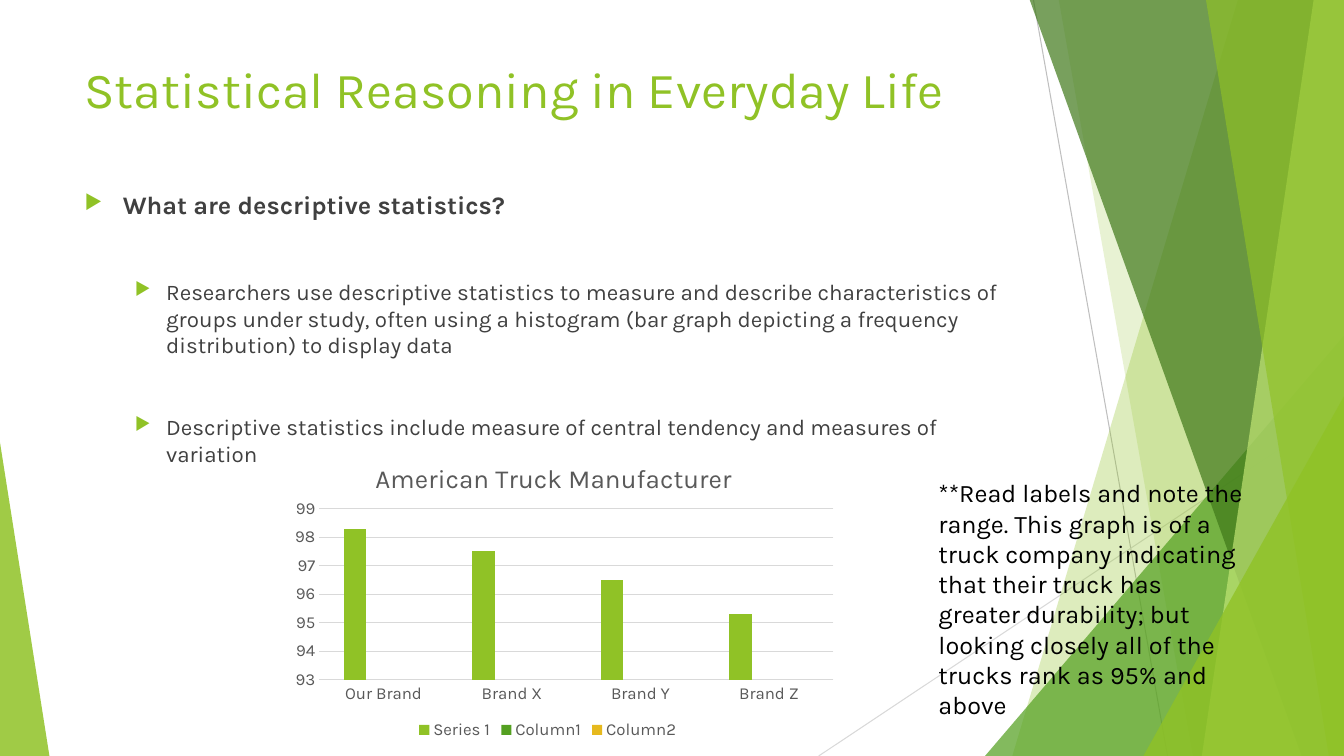
import pptx
import pptx.chart.data
import pptx.dml.color
import pptx.enum.chart
import pptx.enum.shapes
import pptx.enum.text
import pptx.oxml
import pptx.oxml.ns
import pptx.util
import lxml.etree

Inches = pptx.util.Inches
Pt = pptx.util.Pt
RGB = pptx.dml.color.RGBColor
qn = pptx.oxml.ns.qn

LIME = RGB(0x90, 0xC2, 0x26)
GREEN = RGB(0x54, 0xA0, 0x21)
PINE = RGB(0x3F, 0x78, 0x19)
PALE = RGB(0xC0, 0xE4, 0x74)
GOLD = RGB(0xE6, 0xB9, 0x1E)
BLACK = RGB(0, 0, 0)
DARK = RGB(0x40, 0x40, 0x40)
GREY = RGB(0x59, 0x59, 0x59)
SILVER = RGB(0xBF, 0xBF, 0xBF)
MIST = RGB(0xD9, 0xD9, 0xD9)


def apply(item, form):
    for name, value in form.items():
        setattr(item, name, value)


def style(font, size, color, bold=False):
    apply(font, {"name": "Karla", "size": Pt(size), "bold": bold})
    font.color.rgb = color


def tint(shape, color, alpha):
    shape.shadow.inherit = False
    shape.fill.solid()
    shape.fill.fore_color.rgb = color
    shape.line.fill.background()
    node = shape._element.spPr.find(qn("a:solidFill"))[0]
    lxml.etree.SubElement(node, qn("a:alpha"), val=str(alpha * 1000))


def add_line(slide, start, end, color):
    kind = pptx.enum.shapes.MSO_CONNECTOR.STRAIGHT
    line = slide.shapes.add_connector(kind, *map(Inches, start + end))
    line.line.color.rgb = color
    line.line.width = Pt(0.75)
    lxml.etree.SubElement(line._element.spPr, qn("a:effectLst"))


def add_facet(slide, box, head, foot, color, alpha):
    left, top, width, height = box
    right, base = left + width, top + height
    points = [(right, top - 0.01), (right, base), (left + foot, base)]
    pen = slide.shapes.build_freeform(Inches(left + head), Inches(top - 0.01))
    pen.add_line_segments([(Inches(x), Inches(y)) for x, y in points])
    tint(pen.convert_to_shape(), color, alpha)


def add_wedge(slide, box, left, wide, tall, tip, color, alpha):
    x, y, width, height = box
    kind = pptx.enum.shapes.MSO_SHAPE.ISOSCELES_TRIANGLE
    spot = (x + left, y + height - tall, wide, tall)
    wedge = slide.shapes.add_shape(kind, *map(Inches, spot))
    wedge.adjustments[0] = tip
    tint(wedge, color, alpha)


def add_decor(slide, box):
    left, top, width, height = box
    right, base = left + width, top + height
    add_line(slide, (left + 10.25, top), (left + 11.58, base), SILVER)
    add_line(slide, (right, top + 4.03), (left + 8.12, base), MIST)
    for part, *form in [
        (add_facet, 12.28, 10.04, LIME, 30),
        (add_facet, 10.5, 11.83, LIME, 20),
        (add_wedge, 9.77, 3.56, 4.17, 1, GREEN, 72),
        (add_facet, 10.21, 12.91, PINE, 70),
        (add_facet, 13.03, 11.92, PALE, 70),
        (add_facet, 11.96, 13.18, LIME, 65),
        (add_wedge, 11.34, 1.99, 3.57, 1, LIME, 80),
        (add_wedge, 0, 0.49, 3.11, 0, LIME, 85),
    ]:
        part(slide, box, *form)


def add_frame(slide, box):
    frame = slide.shapes.add_textbox(*map(Inches, box)).text_frame
    apply(frame, {
        "word_wrap": True,
        "auto_size": pptx.enum.text.MSO_AUTO_SIZE.NONE,
        "vertical_anchor": pptx.enum.text.MSO_ANCHOR.TOP,
    })
    return frame


def add_text(slide, box, text, size, color):
    run = add_frame(slide, box).paragraphs[0].add_run()
    run.text = text
    style(run.font, size, color)


def add_mark(para, left, hang):
    props = para._p.get_or_add_pPr()
    props.set("marL", str(Inches(left)))
    props.set("indent", str(-Inches(hang)))
    color = lxml.etree.SubElement(props, qn("a:buClr"))
    lxml.etree.SubElement(color, qn("a:srgbClr"), val=str(LIME))
    lxml.etree.SubElement(props, qn("a:buSzPct"), val="80000")
    lxml.etree.SubElement(props, qn("a:buChar"), char="▶")


def add_body(slide, box):
    frame = add_frame(slide, box)
    for rank, (text, level, gap) in enumerate([
        ("What are descriptive statistics?", 0, 0),
        ("Researchers use descriptive statistics to measure and describe "
         "characteristics of groups under study, often using a histogram "
         "(bar graph depicting a frequency distribution) to display data", 1, 41.5),
        ("Descriptive statistics include measure of central tendency and "
         "measures of variation", 1, 39),
    ]):
        para = frame.add_paragraph() if rank else frame.paragraphs[0]
        apply(para, {"level": level, "space_before": Pt(gap)})
        add_mark(para, *((0.81, 0.31) if level else (0.38, 0.38)))
        run = para.add_run()
        run.text = text
        style(run.font, 16 if level else 18, DARK, not level)


def make_place(**form):
    space = 'xmlns:c="http://schemas.openxmlformats.org/drawingml/2006/chart"'
    parts = "".join(f'<c:{name} val="{value}"/>' for name, value in form.items())
    return pptx.oxml.parse_xml(
        f"<c:layout {space}><c:manualLayout>{parts}</c:manualLayout></c:layout>")


def set_place(node, place):
    for old in node.findall(qn("c:layout")):
        node.remove(old)
    text = node.find(qn("c:tx"))
    node.insert(0 if text is None else 1, place)


def add_graph(slide, box):
    data = pptx.chart.data.CategoryChartData()
    data.categories = ["Our Brand", "Brand X", "Brand Y", "Brand Z"]
    data.add_series("Series 1", [98.3, 97.5, 96.5, 95.3])
    for name in ("Column1", "Column2"):
        data.add_series(name, [None] * 4)
    kind = pptx.enum.chart.XL_CHART_TYPE.COLUMN_CLUSTERED
    chart = slide.shapes.add_chart(kind, *map(Inches, box), data).chart
    style(chart.font, 12, GREY)

    chart.has_title = True
    title = chart.chart_title
    title.include_in_layout = False
    run = title.text_frame.paragraphs[0].add_run()
    run.text = "American Truck Manufacturer"
    style(run.font, 18.6, GREY)
    set_place(title._element, make_place(xMode="edge", yMode="edge", x=0.19, y=0.06))

    chart.has_legend = True
    apply(chart.legend, {
        "position": pptx.enum.chart.XL_LEGEND_POSITION.BOTTOM,
        "include_in_layout": False,
    })

    plot = chart.plots[0]
    apply(plot, {"gap_width": 219, "overlap": -27, "vary_by_categories": False})
    for series, color in zip(plot.series, (LIME, GREEN, GOLD)):
        series.format.fill.solid()
        series.format.fill.fore_color.rgb = color
    set_place(chart._chartSpace.chart.plotArea, make_place(
        layoutTarget="inner", xMode="edge", yMode="edge",
        x=0.1, y=0.23, w=0.9, h=0.56))

    none = pptx.enum.chart.XL_TICK_MARK.NONE
    cats, vals = chart.category_axis, chart.value_axis
    for axis in (cats, vals):
        apply(axis, {"major_tick_mark": none, "minor_tick_mark": none})
    apply(vals, {"minimum_scale": 93, "maximum_scale": 99, "major_unit": 1,
                 "has_major_gridlines": True})
    apply(vals.tick_labels, {"number_format": "General",
                             "number_format_is_linked": False})
    vals.format.line.fill.background()
    for line in (cats.format.line, vals.major_gridlines.format.line):
        line.color.rgb = MIST
        line.width = Pt(0.75)


def main():
    deck = pptx.Presentation()
    apply(deck, {"slide_width": Inches(13.33), "slide_height": Inches(7.5)})
    slide = deck.slides.add_slide(deck.slide_layouts[6])
    add_decor(slide, (0, 0, 13.33, 7.5))
    add_text(slide, (0.74, 0.53, 9.4, 0.94),
             "Statistical Reasoning in Everyday Life", 36, LIME)
    add_body(slide, (0.74, 1.83, 9.4, 4.78))
    add_graph(slide, (2.6, 4.35, 5.67, 3.03))
    add_text(slide, (9.21, 4.69, 3.24, 2.52),
             "**Read labels and note the range. This graph is of a truck company "
             "indicating that their truck has greater durability; but looking "
             "closely all of the trucks rank as 95% and above", 18, BLACK)
    deck.save("out.pptx")


if __name__ == "__main__":
    main()
